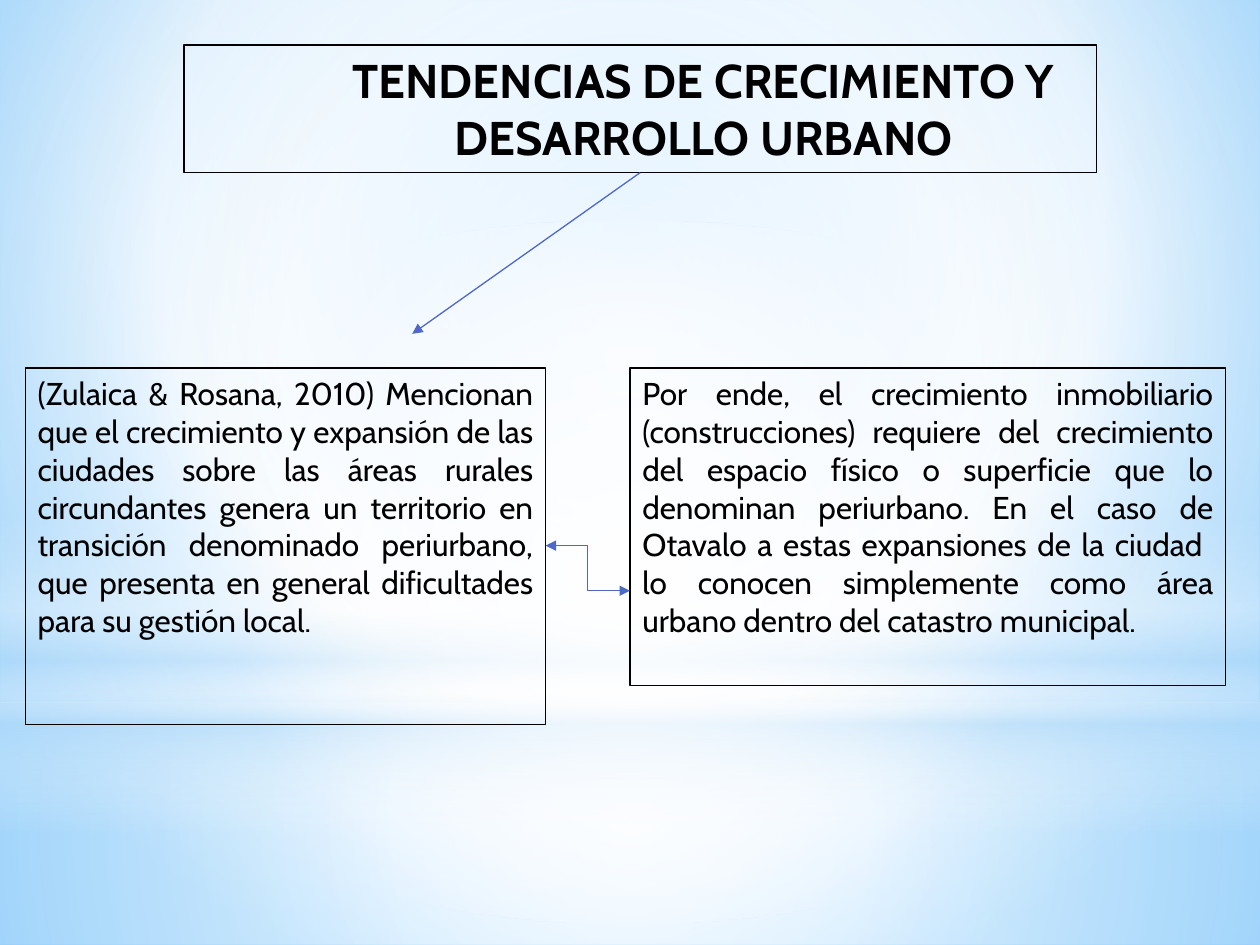
from lxml.etree import SubElement
from pptx import Presentation
from pptx.dml.color import RGBColor
from pptx.enum.shapes import MSO_CONNECTOR as Connector, MSO_SHAPE as Shape
from pptx.enum.text import MSO_ANCHOR as Anchor, MSO_AUTO_SIZE as AutoSize, PP_ALIGN as Align
from pptx.oxml.ns import qn
from pptx.util import Cm, Pt

COLORS = {"ink": "000000", "arrow": "4E67C8", "white": "FFFFFF",
          "pale": "B4DCFA", "sky": "9ED5FF", "blue": "5BB9FF"}
WIDTH, HEIGHT, HORIZON = 25.4, 19.05, 14.17
CENTER = (50, 50, 50, 50)
TITLE = "TENDENCIAS DE CRECIMIENTO Y DESARROLLO URBANO"
PERIURBAN = (
    "(Zulaica & Rosana, 2010) Mencionan que el crecimiento y expansión de las ciudades "
    "sobre las áreas rurales circundantes genera un territorio en transición denominado "
    "periurbano, que presenta en general dificultades para su gestión local.")
OTAVALO = (
    "Por ende, el crecimiento inmobiliario (construcciones) requiere del crecimiento del "
    "espacio físico o superficie que lo denominan periurbano. En el caso de Otavalo a estas "
    "expansiones de la ciudad  lo conocen simplemente como área urbano dentro del catastro "
    "municipal.")

# Shape, box in cm, stops (position, colour, opacity), focus of a circular gradient
GLOWS = [
    (Shape.RECTANGLE, (0, HORIZON, WIDTH, HEIGHT - HORIZON),
     [(0, "white", 91), (37, "white", 76), (100, "pale", 79)], CENTER),
    (Shape.RECTANGLE, (0, 0, WIDTH, HORIZON),
     [(0, "white", 89), (48, "white", 62), (100, "pale", 79)], CENTER),
    (Shape.RECTANGLE, (0, 10.46, WIDTH, 6.35),
     [(0, "white", 0), (29, "white", 30), (45, "pale", 40),
      (55, "white", 26), (65, "pale", 60), (100, "white", 0)], None),
    (Shape.OVAL, (0, 4.45, WIDTH, HORIZON),
     [(0, "white", 100), (56, "white", 0)], CENTER),
]


def rgb(name):
    return RGBColor.from_string(COLORS[name])


def set_gradient(fill, element, stops, focus):
    """Fill with a circular gradient, or a vertical one when focus is None."""
    fill.background()
    empty = element.find(".//" + qn("a:noFill"))
    gradient = empty.makeelement(qn("a:gradFill"), {"rotWithShape": "1"})
    stop_list = SubElement(gradient, qn("a:gsLst"))
    for position, name, opacity in stops:
        stop = SubElement(stop_list, qn("a:gs"), pos=str(position * 1000))
        color = SubElement(stop, qn("a:srgbClr"), val=COLORS[name])
        if opacity < 100:
            SubElement(color, qn("a:alpha"), val=str(opacity * 1000))
    if focus:
        circle = SubElement(gradient, qn("a:path"), {"path": "circle"})
        sides = {side: str(part * 1000) for side, part in zip("ltrb", focus)}
        SubElement(circle, qn("a:fillToRect"), sides)
    else:
        SubElement(gradient, qn("a:lin"), ang="5400000", scaled="0")
    empty.getparent().replace(empty, gradient)


def add_glow(slide, kind, box, stops, focus):
    shape = slide.shapes.add_shape(kind, *map(Cm, box))
    shape.shadow.inherit = False
    set_gradient(shape.fill, shape.element, stops, focus)
    shape.line.fill.background()


def format_box(shape, box, text, align, size, bold=False):
    """Place an outlined text box and write its only paragraph."""
    for name, value in zip(("left", "top", "width", "height"), box):
        setattr(shape, name, Cm(value))
    shape.fill.background()
    shape.line.color.rgb = rgb("ink")
    shape.line.width = Pt(0.75)
    frame = shape.text_frame
    frame_format = {"word_wrap": True, "auto_size": AutoSize.NONE, "vertical_anchor": Anchor.TOP}
    for name, value in frame_format.items():
        setattr(frame, name, value)
    paragraph = frame.paragraphs[0]
    paragraph.alignment = align
    run = paragraph.add_run()
    run.text = text
    for name, value in {"name": "Cabin", "size": Pt(size), "bold": bold}.items():
        setattr(run.font, name, value)
    run.font.color.rgb = rgb("ink")
    return paragraph


def add_title(slide):
    title = slide.shapes.title
    title.element.getparent().append(title.element)  # in front of the glows
    paragraph = format_box(title, (3.71, 0.91, 18.39, 2.57), TITLE, Align.CENTER, 27, True)
    properties = paragraph._p.get_or_add_pPr()
    properties.set("marL", str(Cm(2.54)))
    properties.set("indent", "0")
    return title


def add_arrow(slide, kind, start, end, heads):
    arrow = slide.shapes.add_connector(kind, *map(Cm, start + end))
    arrow.line.color.rgb = rgb("arrow")
    arrow.line.width = Pt(0.75)
    line = arrow.line._get_or_add_ln()
    for head in heads:
        SubElement(line, qn(head), type="triangle")
    SubElement(arrow.element.spPr, qn("a:effectLst"))
    return arrow


def main():
    presentation = Presentation()
    presentation.slide_width, presentation.slide_height = Cm(WIDTH), Cm(HEIGHT)
    slide = presentation.slides.add_slide(presentation.slide_layouts[5])
    background = slide.background
    set_gradient(background.fill, slide.element,
                 [(0, "sky", 100), (60, "white", 100), (100, "blue", 100)], (20, 10, 20, 60))
    for glow in GLOWS:
        add_glow(slide, *glow)

    for box, text in (((0.51, 7.42, 10.49, 7.19), PERIURBAN),
                      ((12.7, 7.42, 12.01, 6.4), OTAVALO)):
        shape = slide.shapes.add_shape(Shape.RECTANGLE, *map(Cm, box))
        shape.shadow.inherit = False
        format_box(shape, box, text, Align.JUSTIFY, 18)
    title = add_title(slide)

    arrow = add_arrow(slide, Connector.STRAIGHT, (12.9, 3.48), (8.31, 6.73), ["a:tailEnd"])
    arrow.begin_connect(title, 2)
    add_arrow(slide, Connector.ELBOW, (11, 11), (12.7, 11.91), ["a:headEnd", "a:tailEnd"])
    presentation.save("out.pptx")


if __name__ == "__main__":
    main()
